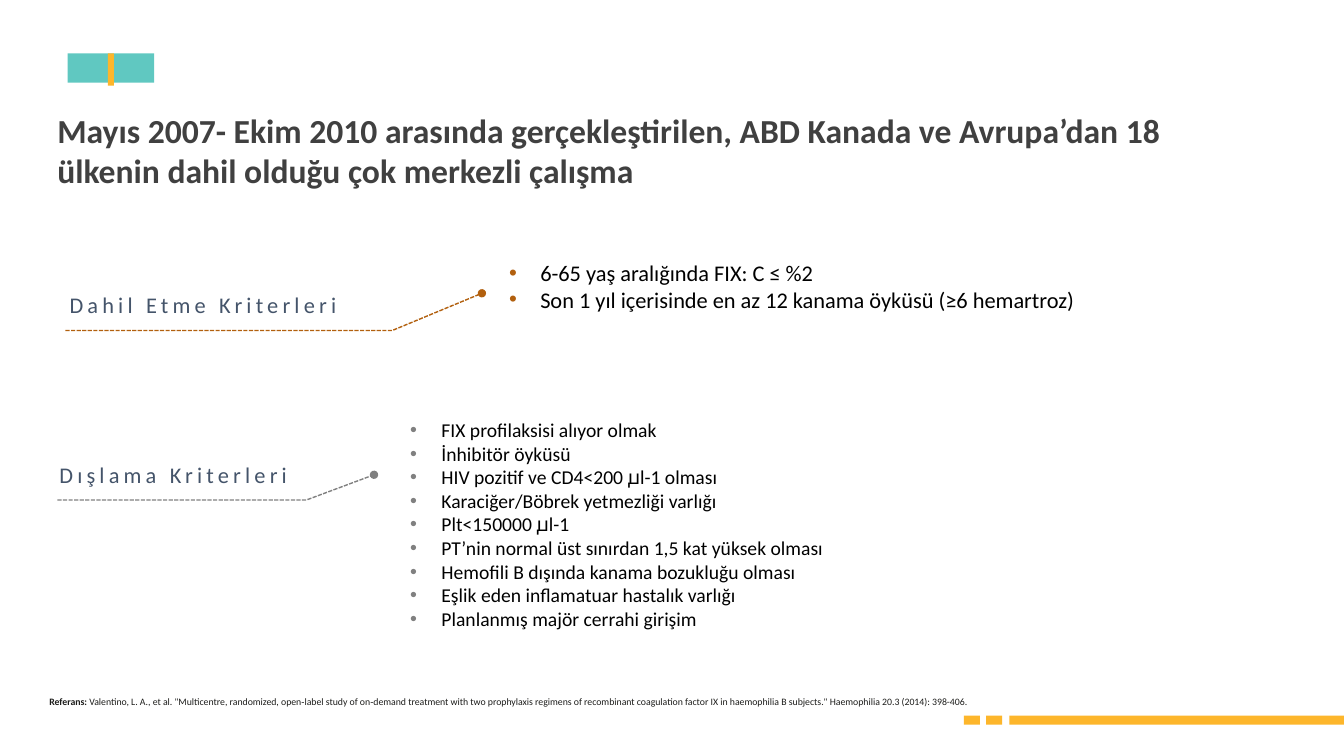
from pptx import Presentation
from pptx.dml.color import RGBColor as Rgb
from pptx.enum.dml import MSO_LINE as Dash
from pptx.enum.shapes import MSO_SHAPE as Kind
from pptx.enum.text import MSO_AUTO_SIZE as Fit, PP_ALIGN as Align
from pptx.util import Inches, Pt
from lxml.etree import SubElement as Sub
from pptx.oxml.ns import qn

TEAL, GOLD, RUST, GREY = "60C8C1", "FDB62B", "B2600E", "808080"
DARK, NAVY, INK, BLACK = "404040", "44546A", "1D1D1B", "000000"

TITLE = ("Mayıs 2007- Ekim 2010 arasında gerçekleştirilen, ABD Kanada ve "
         "Avrupa’dan 18 ülkenin dahil olduğu çok merkezli çalışma")
SOURCE = ('Valentino, L. A., et al. "Multicentre, randomized, open‐label study of '
          'on‐demand treatment with two prophylaxis regimens of recombinant '
          'coagulation factor IX in haemophilia B subjects." '
          'Haemophilia 20.3 (2014): 398-406.')
INCLUDE = ["6-65 yaş aralığında FIX: C ≤ %2",
           "Son 1 yıl içerisinde en az 12 kanama öyküsü (≥6 hemartroz)"]
EXCLUDE = ["FIX profilaksisi alıyor olmak",
           "İnhibitör öyküsü",
           "HIV pozitif ve CD4<200 ꙡl-1 olması",
           "Karaciğer/Böbrek yetmezliği varlığı",
           "Plt<150000 ꙡl-1",
           "PT’nin normal üst sınırdan 1,5 kat yüksek olması",
           "Hemofili B dışında kanama bozukluğu olması",
           "Eşlik eden inflamatuar hastalık varlığı",
           "Planlanmış majör cerrahi girişim"]


def color(code):
    """Turn a hex string into a colour."""
    return Rgb.from_string(code)


def style(item, **values):
    """Set each given attribute on an item."""
    for name, value in values.items():
        setattr(item, name, value)


def bar(slide, box, code):
    """Draw a plain filled rectangle."""
    shape = slide.shapes.add_shape(Kind.RECTANGLE, *map(Inches, box))
    shape.shadow.inherit = False
    shape.fill.solid()
    shape.fill.fore_color.rgb = color(code)
    shape.line.fill.background()


def frame(slide, box, wrap=True):
    """Add a text box and return its text frame."""
    body = slide.shapes.add_textbox(*map(Inches, box)).text_frame
    style(body, word_wrap=wrap, auto_size=Fit.SHAPE_TO_FIT_TEXT)
    return body


def write(para, text, size, code, bold=False):
    """Add a formatted run to a paragraph."""
    run = para.add_run()
    run.text = text
    style(run.font, name="Calibri", size=Pt(size), bold=bold)
    run.font.color.rgb = color(code)
    return run


def label(slide, box, text):
    """Place a letter-spaced group label."""
    para = frame(slide, box, False).paragraphs[0]
    para.alignment = Align.CENTER
    write(para, text, 16, NAVY).font._element.set("spc", "300")


def bullets(slide, box, items, size, code):
    """Place a list with coloured bullets."""
    body = frame(slide, box)
    for i, text in enumerate(items):
        para = body.add_paragraph() if i else body.paragraphs[0]
        write(para, text, size, BLACK)
        props = para._p.get_or_add_pPr()
        indent = Inches(0.31)
        props.set("marL", str(indent))
        props.set("indent", str(-indent))
        Sub(Sub(props, qn("a:buClr")), qn("a:srgbClr"), val=code)
        Sub(props, qn("a:buFont"), typeface="Arial")
        Sub(props, qn("a:buChar"), char="•")


def leader(slide, box, bend, code):
    """Draw a dashed underline that rises to a dot at the box's top right."""
    left, top, width, height = box
    base = top + height
    pen = slide.shapes.build_freeform(Inches(left), Inches(base))
    ends = [(left + bend, base), (left + width, top)]
    pen.add_line_segments([(Inches(x), Inches(y)) for x, y in ends], close=False)
    shape = pen.convert_to_shape()
    shape.shadow.inherit = False
    shape.fill.background()
    shape.line.color.rgb = color(code)
    style(shape.line, width=Pt(1), dash_style=Dash.SQUARE_DOT)
    Sub(shape.line._get_or_add_ln(), qn("a:tailEnd"), type="oval")


def group(slide, name, items, size, code, boxes, bend):
    """Place a label, its list and the leader between them."""
    tag, body, path = boxes
    label(slide, tag, name)
    bullets(slide, body, items, size, code)
    leader(slide, path, bend, code)


def head(slide, box):
    """Place the accent mark and the title."""
    left, top, width, height = box
    bar(slide, (left + 0.2, top - 0.51, 0.86, 0.29), TEAL)
    bar(slide, (left + 0.6, top - 0.51, 0.06, 0.32), GOLD)
    write(frame(slide, box).paragraphs[0], TITLE, 24, DARK, True)


def foot(slide, box):
    """Place the reference and the gold stripes below it."""
    para = frame(slide, box).paragraphs[0]
    style(para, line_spacing=Pt(10.8), space_before=Pt(2.3))
    write(para, "Referans: ", 7, INK, True)
    write(para, SOURCE, 7, INK)
    for x, width in [(9.56, 0.16), (9.78, 0.16), (10.01, 3.32)]:
        bar(slide, (x, box[1] + 0.28, width, 0.09), GOLD)


def main():
    """Build and save the slide."""
    deck = Presentation()
    style(deck, slide_width=Inches(13.33), slide_height=Inches(7.5))
    slide = deck.slides.add_slide(deck.slide_layouts[6])
    head(slide, (0.47, 1.04, 11.83, 0.91))
    group(slide, "Dahil Etme Kriterleri", INCLUDE, 16, RUST,
          [(0.57, 2.84, 2.89, 0.37), (4.95, 2.52, 8.21, 0.64),
           (0.65, 2.91, 4.13, 0.37)], 3.24)
    group(slide, "Dışlama Kriterleri", EXCLUDE, 14, GREY,
          [(0.47, 4.53, 2.5, 0.37), (3.97, 4.1, 8.4, 2.22),
           (0.57, 4.71, 3.14, 0.25)], 2.47)
    foot(slide, (0.39, 6.82, 12.08, 0.24))
    deck.save("out.pptx")


if __name__ == "__main__":
    main()
